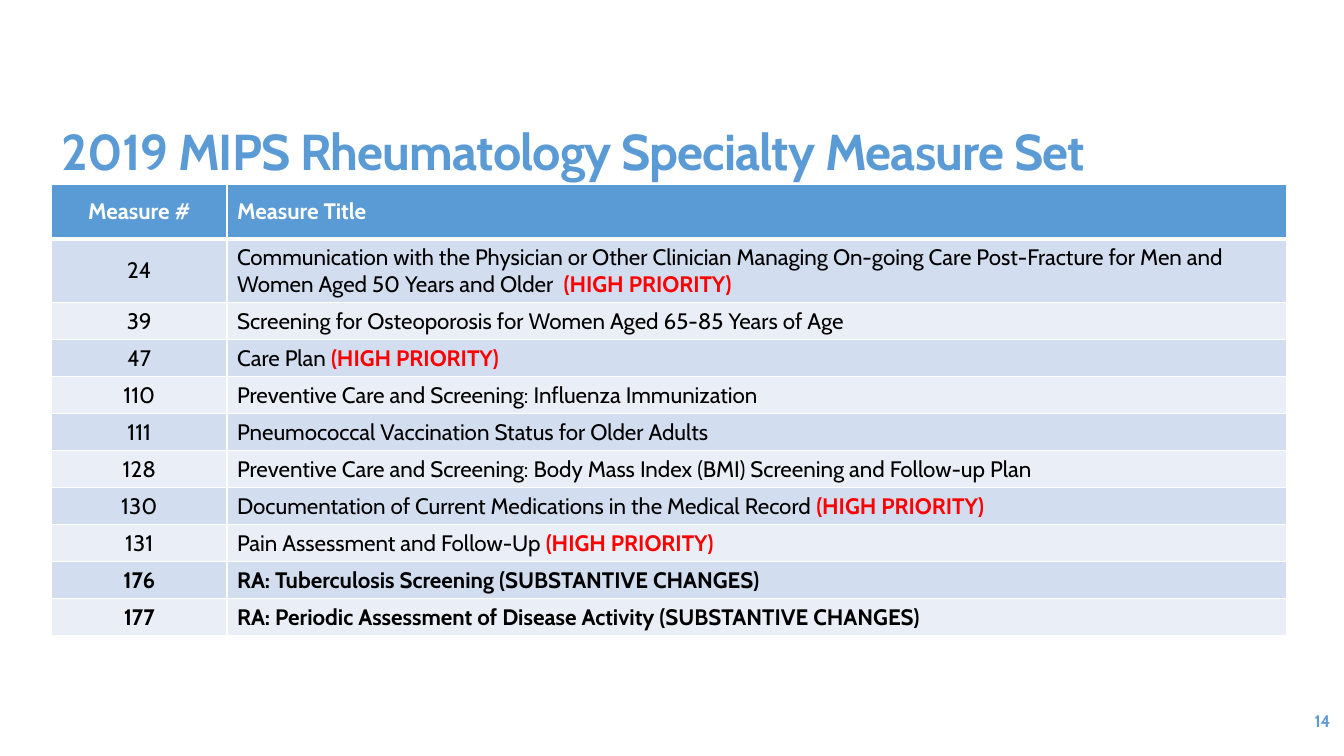
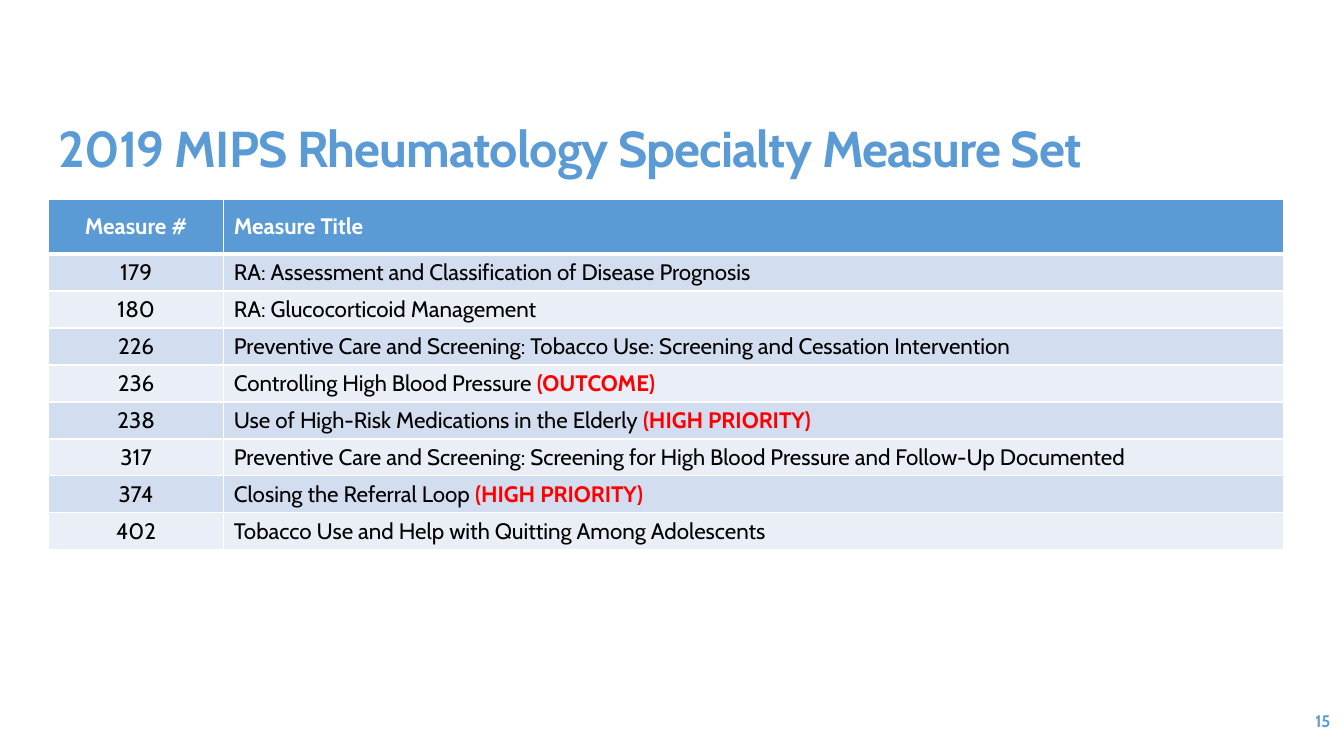
from dataclasses import dataclass
from typing import Any

from lxml import etree
from pptx import Presentation
from pptx.dml.color import RGBColor
from pptx.enum import text as tx
from pptx.oxml import ns
from pptx.util import Cm, Pt

FONT = "Cabin"
HEX = {
    "blue": "5B9BD5",
    "white": "FFFFFF",
    "black": "000000",
    "red": "FF0000",
    "dark": "D2DEEF",
    "light": "EAEFF7",
}
TITLE = "2019 MIPS Rheumatology Specialty Measure Set"
HEADS = ("Measure #", "Measure Title")
HIGH = "(HIGH PRIORITY)"
COLS = (4.42, 26.7)
HEAD_H, ROW_H = 1.37, 0.93
ALIGNS = (tx.PP_ALIGN.CENTER, tx.PP_ALIGN.LEFT)


@dataclass(frozen=True)
class Item:
    code: str
    name: str
    flag: str = ""
    bold: bool = False


@dataclass(frozen=True)
class Page:
    num: int
    left: float
    title_top: float
    grid_top: float
    items: tuple[Item, ...]


PAGES = (
    Page(14, 1.3, 3.07, 4.65, (
        Item("24", "Communication with the Physician or Other Clinician Managing On-going Care "
             "Post-Fracture for Men and Women Aged 50 Years and Older  ", HIGH),
        Item("39", "Screening for Osteoporosis for Women Aged 65-85 Years of Age"),
        Item("47", "Care Plan ", HIGH),
        Item("110", "Preventive Care and Screening: Influenza Immunization"),
        Item("111", "Pneumococcal Vaccination Status for Older Adults"),
        Item("128", "Preventive Care and Screening: Body Mass Index (BMI) Screening and Follow-up Plan"),
        Item("130", "Documentation of Current Medications in the Medical Record ", HIGH),
        Item("131", "Pain Assessment and Follow-Up ", HIGH),
        Item("176", "RA: Tuberculosis Screening (SUBSTANTIVE CHANGES)", bold=True),
        Item("177", "RA: Periodic Assessment of Disease Activity (SUBSTANTIVE CHANGES)", bold=True),
    )),
    Page(15, 1.22, 3.0, 5.03, (
        Item("179", "RA: Assessment and Classification of Disease Prognosis"),
        Item("180", "RA: Glucocorticoid Management"),
        Item("226", "Preventive Care and Screening: Tobacco Use: Screening and Cessation Intervention"),
        Item("236", "Controlling High Blood Pressure ", "(OUTCOME)"),
        Item("238", "Use of High-Risk Medications in the Elderly ", HIGH),
        Item("317", "Preventive Care and Screening: Screening for High Blood Pressure and Follow-Up Documented"),
        Item("374", "Closing the Referral Loop ", HIGH),
        Item("402", "Tobacco Use and Help with Quitting Among Adolescents"),
    )),
)


def write(para: Any, text: str, *, size: float = 16, color: str = "black", bold: bool = False,
          align: Any = tx.PP_ALIGN.LEFT, track: int = 0) -> None:
    para.alignment = align
    run = para.add_run()
    run.text = text
    font = run.font
    font.name, font.size, font.bold = FONT, Pt(size), bold
    font.color.rgb = RGBColor.from_string(HEX[color])
    if track:
        run._r.get_or_add_rPr().set("spc", str(track))


def edge(cell: Any, top: float, base: float) -> None:
    props = cell._tc.get_or_add_tcPr()
    for side, width in (("L", 1), ("R", 1), ("T", top), ("B", base)):
        line = etree.SubElement(props, ns.qn(f"a:ln{side}"), w=str(Pt(width)))
        fill = etree.SubElement(line, ns.qn("a:solidFill"))
        etree.SubElement(fill, ns.qn("a:srgbClr"), val=HEX["white"])


def paint(cell: Any, color: str) -> None:
    cell.fill.solid()
    cell.fill.fore_color.rgb = RGBColor.from_string(HEX[color])
    cell.vertical_anchor = tx.MSO_ANCHOR.MIDDLE


def add_title(slide: Any, page: Page) -> None:
    title = slide.shapes.title
    title.left, title.top = Cm(page.left), Cm(page.title_top)
    title.width, title.height = Cm(32.08), Cm(1.57)
    frame = title.text_frame
    frame.word_wrap = True
    frame.auto_size = tx.MSO_AUTO_SIZE.NONE
    frame.vertical_anchor = tx.MSO_ANCHOR.TOP
    para = frame.paragraphs[0]
    para.line_spacing = 0.9
    write(para, TITLE, size=36, color="blue", bold=True, track=-60)


def add_grid(slide: Any, page: Page) -> None:
    count = len(page.items) + 1
    grid = slide.shapes.add_table(
        count, len(COLS), Cm(page.left), Cm(page.grid_top),
        Cm(sum(COLS)), Cm(HEAD_H + ROW_H * (count - 1))).table
    for col, width in zip(grid.columns, COLS):
        col.width = Cm(width)
    for row_no, row in enumerate(grid.rows):
        row.height = Cm(ROW_H if row_no else HEAD_H)
        item = page.items[row_no - 1] if row_no else Item(*HEADS, bold=True)
        ground = ("light", "dark")[row_no % 2] if row_no else "blue"
        for cell, text, align in zip(row.cells, (item.code, item.name), ALIGNS):
            edge(cell, 3 if row_no == 1 else 1, 1 if row_no else 3)
            paint(cell, ground)
            write(cell.text_frame.paragraphs[0], text, bold=item.bold, align=align,
                  color="black" if row_no else "white")
        if item.flag:
            write(row.cells[1].text_frame.paragraphs[0], item.flag, color="red", bold=True)


def add_num(slide: Any, page: Page) -> None:
    frame = slide.shapes.add_textbox(Cm(29.54), Cm(17.65), Cm(4.24), Cm(1.02)).text_frame
    frame.word_wrap = True
    frame.vertical_anchor = tx.MSO_ANCHOR.MIDDLE
    write(frame.paragraphs[0], str(page.num), size=12, color="blue", bold=True,
          align=tx.PP_ALIGN.RIGHT)


def main() -> None:
    deck = Presentation()
    deck.slide_width, deck.slide_height = Cm(33.87), Cm(19.05)
    for page in PAGES:
        slide = deck.slides.add_slide(deck.slide_layouts[5])
        add_num(slide, page)
        add_grid(slide, page)
        add_title(slide, page)
    deck.save("out.pptx")


if __name__ == "__main__":
    main()
